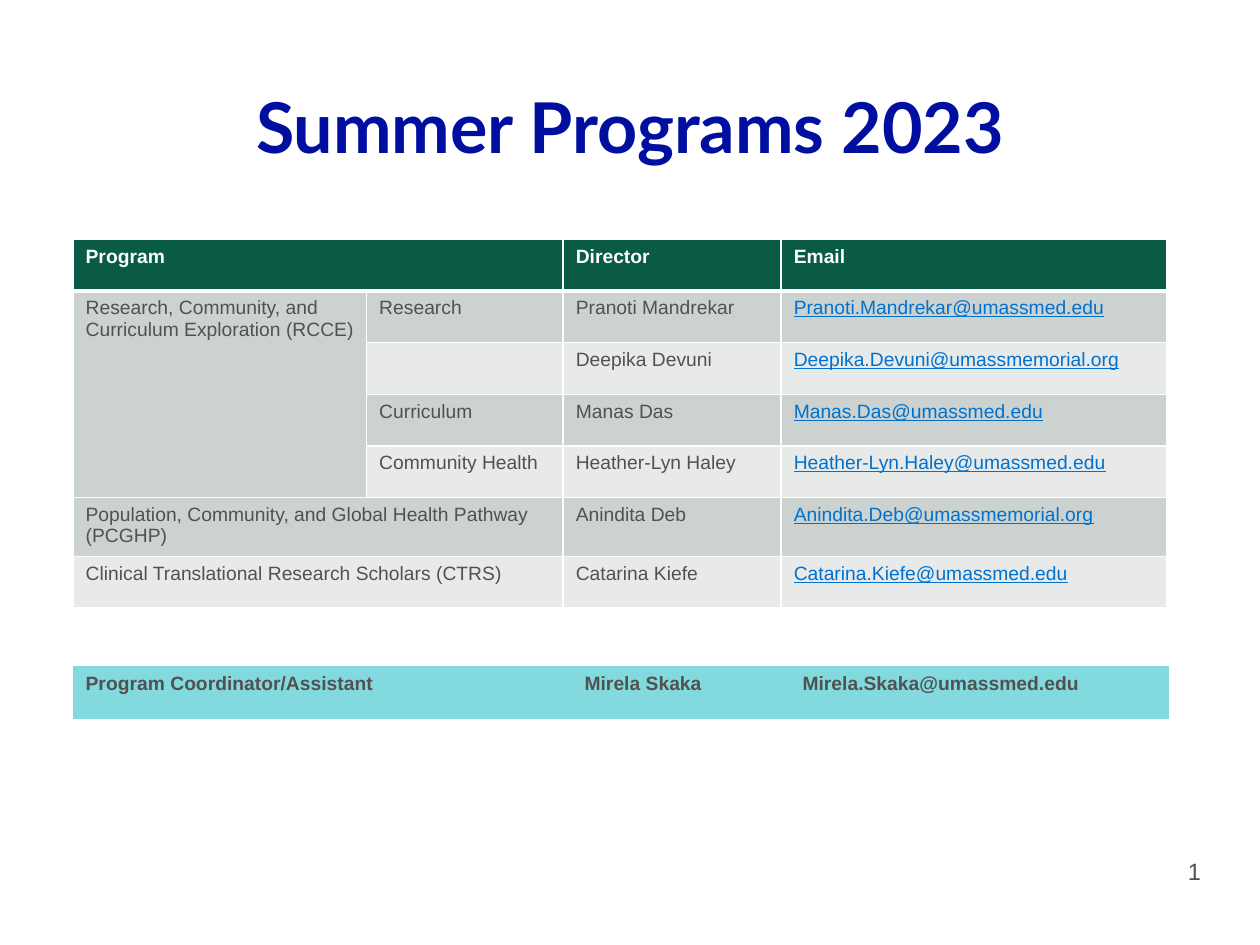
from pptx import Presentation
from pptx.dml.color import RGBColor
from pptx.enum.text import MSO_ANCHOR, PP_ALIGN
from pptx.oxml.ns import qn
from pptx.util import Inches, Pt
from lxml import etree

TOP, MIDDLE = MSO_ANCHOR.TOP, MSO_ANCHOR.MIDDLE
CENTER, RIGHT = PP_ALIGN.CENTER, PP_ALIGN.RIGHT

WHITE, GREEN, TEAL = "FFFFFF", "0A5B45", "83DADE"
NAVY, GRAY, BLUE = "000F9F", "515151", "0071CE"
BANDS = ("CCD2CF", "E7EAE9")
ROW_HEIGHT = 0.41

HEADER = ("Program", "", "Director", "Email")
PROGRAMS = (
    ("Research, Community, and Curriculum Exploration (RCCE)", "Research",
     "Pranoti Mandrekar", "Pranoti.Mandrekar@umassmed.edu"),
    ("", "", "Deepika Devuni", "Deepika.Devuni@umassmemorial.org"),
    ("", "Curriculum", "Manas Das", "Manas.Das@umassmed.edu"),
    ("", "Community Health", "Heather-Lyn Haley", "Heather-Lyn.Haley@umassmed.edu"),
    ("Population, Community, and Global Health Pathway  (PCGHP)", "",
     "Anindita Deb", "Anindita.Deb@umassmemorial.org"),
    ("Clinical Translational Research Scholars (CTRS)", "",
     "Catarina Kiefe", "Catarina.Kiefe@umassmed.edu"),
)
COORDINATOR = ("Program Coordinator/Assistant", "Mirela Skaka", "Mirela.Skaka@umassmed.edu")


def rgb(color):
    return RGBColor.from_string(color)


class SlideBuilder:
    def __init__(self, slide):
        self.slide = slide
        self.body = {"name": "Arial", "size": Pt(11)}

    def format_text(self, paragraph, text, color, **values):
        paragraph.text = text
        for name, value in {**self.body, **values}.items():
            setattr(paragraph.font, name, value)
        paragraph.font.color.rgb = rgb(color)

    def text(self, text, box, color, align, anchor, **values):
        shape = self.slide.shapes.add_textbox(*map(Inches, box))
        frame = shape.text_frame
        frame.word_wrap = True
        frame.vertical_anchor = anchor
        paragraph = frame.paragraphs[0]
        self.format_text(paragraph, text, color, **values)
        paragraph.alignment = align
        return paragraph

    def table(self, left, top, widths, row_count):
        """Add a table without the banding of its built-in style."""
        shape = self.slide.shapes.add_table(
            row_count, len(widths), Inches(left), Inches(top),
            Inches(sum(widths)), Inches(ROW_HEIGHT * row_count))
        table = shape.table
        table.first_row = table.horz_banding = False
        for column, width in zip(table.columns, widths):
            column.width = Inches(width)
        return table

    def border(self, cell, color, widths):
        """Draw cell edges from a dict of edge letter to width in points."""
        properties = cell._tc.get_or_add_tcPr()
        for edge, width in widths.items():
            line = etree.SubElement(properties, qn(f"a:ln{edge}"), w=str(Pt(width)))
            fill = etree.SubElement(line, qn("a:solidFill"))
            etree.SubElement(fill, qn("a:srgbClr"), val=color)

    def cell(self, cell, text, fill, color, edge_color, edges, **values):
        self.border(cell, edge_color, edges)
        cell.fill.solid()
        cell.fill.fore_color.rgb = rgb(fill)
        self.format_text(cell.text_frame.paragraphs[0], text, color, **values)


def add_programs(builder):
    rows = (HEADER, *PROGRAMS)
    table = builder.table(0.58, 1.9, (2.33, 1.56, 1.73, 3.06), len(rows))
    for row, texts in enumerate(rows):
        is_header = row == 0
        fill = GREEN if is_header else BANDS[(row - 1) % 2]
        edges = {"L": 1, "R": 1, "T": 3 if row == 1 else 1, "B": 3 if is_header else 1}
        for column, text in enumerate(texts):
            is_email = column == 3 and not is_header
            color = WHITE if is_header else BLUE if is_email else GRAY
            builder.cell(table.cell(row, column), text, fill, color, WHITE, edges,
                         bold=is_header, underline=is_email)
    for row in (0, 5, 6):
        table.cell(row, 0).merge(table.cell(row, 1))
    table.cell(1, 0).merge(table.cell(4, 0))


def add_coordinator(builder):
    table = builder.table(0.58, 5.29, (3.96, 1.73, 3), 1)
    edges = dict.fromkeys("LRTB", 0.5)
    for column, text in enumerate(COORDINATOR):
        builder.cell(table.cell(0, column), text, TEAL, GRAY, TEAL, edges, bold=True)


def main():
    presentation = Presentation()
    presentation.slide_width, presentation.slide_height = Inches(10), Inches(7.5)
    builder = SlideBuilder(presentation.slides.add_slide(presentation.slide_layouts[6]))
    builder.text("1", (7.38, 6.71, 2.25, 0.4), GRAY, RIGHT, MIDDLE, size=Pt(13.5))
    title = builder.text("Summer Programs 2023", (0.75, 0.69, 8.5, 1.81), NAVY, CENTER, TOP,
                         name="Lato", size=Pt(40), bold=True)
    title.line_spacing = 0.9
    add_programs(builder)
    add_coordinator(builder)
    presentation.save("out.pptx")


if __name__ == "__main__":
    main()
